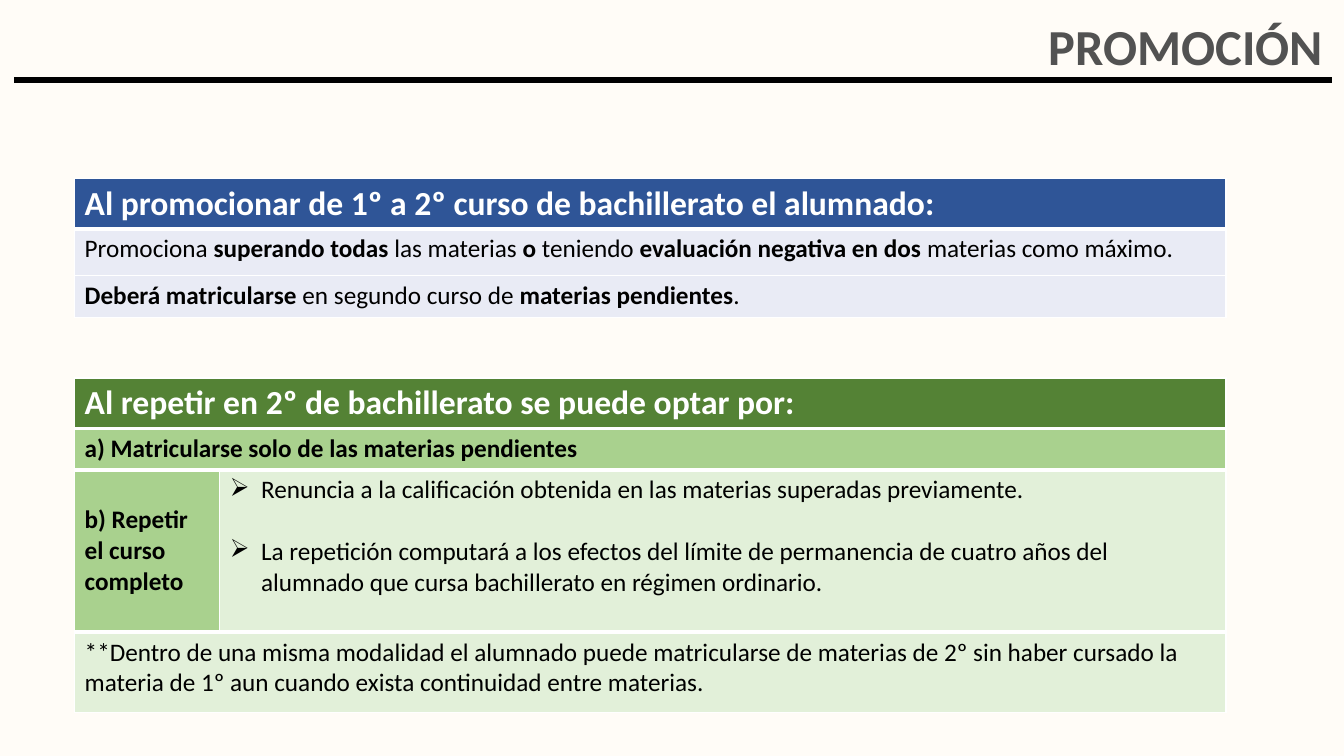
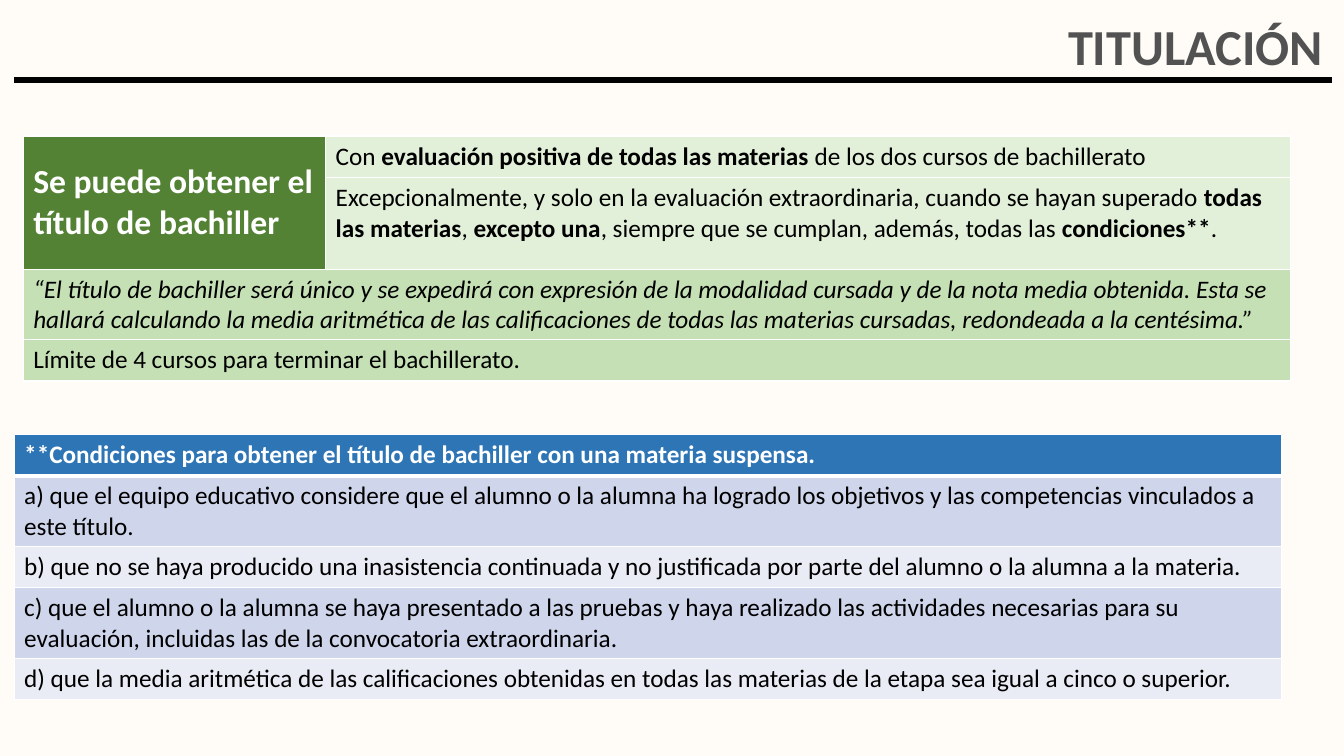
from dataclasses import dataclass

from lxml.etree import SubElement
from pptx import Presentation
from pptx.dml.color import RGBColor
from pptx.enum.shapes import MSO_CONNECTOR as Connector
from pptx.enum.text import MSO_ANCHOR as Anchor, PP_ALIGN as Align
from pptx.oxml.ns import qn
from pptx.util import Pt

PX = 9144  # EMU per px, 100 px to the inch


@dataclass(frozen=True)
class Theme:
    font: str = "Calibri"
    background: str = "FFFCF7"
    title: str = "525252"
    black: str = "000000"
    white: str = "FFFFFF"
    navy: str = "2F5597"
    blue: str = "2E75B6"
    blue_band: str = "CFD5EA"
    blue_pale: str = "E9EBF5"
    green_dark: str = "548235"
    green: str = "A9D18E"
    green_soft: str = "C5E0B4"
    green_pale: str = "E2F0D9"
    title_size: int = 36
    heading_size: int = 24
    body_size: int = 18


THEME = Theme()

# Text styles
TITLE = dict(size=THEME.title_size, color=THEME.title, bold=True)
HEADING = dict(size=THEME.heading_size, color=THEME.white, bold=True)
SUBHEADING = dict(HEADING, size=THEME.body_size)
BODY = dict(size=THEME.body_size, color=THEME.black, bold=False)
STRONG = dict(BODY, bold=True)
QUOTE = dict(BODY, italic=True)

# Slide contents. Cells: row, column, (rows, columns) spanned, fill, style,
# anchor, paragraphs. Words between bars switch to bold; "thick" lists the
# row boundaries with a heavy rule.
SLIDES = [
    ("PROMOCIÓN", [
        dict(left=74, top=177, columns=[1142], rows=[50, 46, 42], thick=[1], cells=[
            (0, 0, (1, 1), THEME.navy, HEADING, Anchor.TOP,
             ["Al promocionar de 1º a 2º curso de bachillerato el alumnado:"]),
            (1, 0, (1, 1), THEME.blue_pale, BODY, Anchor.TOP,
             ["Promociona |superando todas| las materias |o| teniendo "
              "|evaluación negativa en dos |materias como máximo."]),
            (2, 0, (1, 1), THEME.blue_pale, BODY, Anchor.TOP,
             ["|Deberá matricularse |en segundo curso de |materias pendientes|."]),
        ]),
        dict(left=74, top=375, columns=[144, 998], rows=[50, 41, 161, 80],
             thick=[1, 2, 3], cells=[
            (0, 0, (1, 2), THEME.green_dark, HEADING, Anchor.TOP,
             ["Al repetir en 2º de bachillerato se puede optar por:"]),
            (1, 0, (1, 2), THEME.green, STRONG, Anchor.TOP,
             ["a) Matricularse solo de las materias pendientes"]),
            (2, 0, (1, 1), THEME.green, STRONG, Anchor.MIDDLE,
             ["b) Repetir el curso completo"]),
            (2, 1, (1, 1), THEME.green_pale, BODY, Anchor.TOP,
             ["Renuncia a la calificación obtenida en las materias superadas previamente.",
              "La repetición computará a los efectos del límite de permanencia de cuatro "
              "años del alumnado que cursa bachillerato en régimen ordinario."]),
            (3, 0, (1, 2), THEME.green_pale, BODY, Anchor.TOP,
             ["**Dentro de una misma modalidad el alumnado puede matricularse de materias "
              "de 2º sin haber cursado la materia de 1º aun cuando exista continuidad "
              "entre materias."]),
        ]),
    ]),
    ("TITULACIÓN", [
        dict(left=23, top=135, columns=[300, 957], rows=[41, 91, 70, 41], thick=[], cells=[
            (0, 0, (2, 1), THEME.green_dark, HEADING, Anchor.MIDDLE,
             ["Se puede obtener el título de bachiller"]),
            (0, 1, (1, 1), THEME.green_pale, BODY, Anchor.TOP,
             ["Con |evaluación positiva de todas las materias| de los dos cursos de "
              "bachillerato"]),
            (1, 1, (1, 1), THEME.green_pale, BODY, Anchor.TOP,
             ["Excepcionalmente, y solo en la evaluación extraordinaria, cuando se hayan "
              "superado |todas las materias|, |excepto una|, siempre que se cumplan, "
              "además, todas las |condiciones**|."]),
            (2, 0, (1, 2), THEME.green_soft, QUOTE, Anchor.MIDDLE,
             ["“El título de bachiller será único y se expedirá con expresión de la "
              "modalidad cursada y de la nota media obtenida. Esta se hallará calculando "
              "la media aritmética de las calificaciones de todas las materias cursadas, "
              "redondeada a la centésima.”"]),
            (3, 0, (1, 2), THEME.green_soft, BODY, Anchor.MIDDLE,
             ["Límite de 4 cursos para terminar el bachillerato."]),
        ]),
        dict(left=14, top=431, columns=[1257], rows=[41, 70, 41, 70, 41], thick=[1], cells=[
            (0, 0, (1, 1), THEME.blue, SUBHEADING, Anchor.TOP,
             ["**Condiciones para obtener el título de bachiller con una materia suspensa."]),
            (1, 0, (1, 1), THEME.blue_band, BODY, Anchor.TOP,
             ["a) que el equipo educativo considere que el alumno o la alumna ha logrado "
              "los objetivos y las competencias vinculados a este título."]),
            (2, 0, (1, 1), THEME.blue_pale, BODY, Anchor.TOP,
             ["b) que no se haya producido una inasistencia continuada y no justificada "
              "por parte del alumno o la alumna a la materia."]),
            (3, 0, (1, 1), THEME.blue_band, BODY, Anchor.TOP,
             ["c) que el alumno o la alumna se haya presentado a las pruebas y haya "
              "realizado las actividades necesarias para su evaluación, incluidas las de "
              "la convocatoria extraordinaria."]),
            (4, 0, (1, 1), THEME.blue_pale, BODY, Anchor.TOP,
             ["d) que la media aritmética de las calificaciones obtenidas en todas las "
              "materias de la etapa sea igual a cinco o superior."]),
        ]),
    ]),
]


def write_text(paragraph, text, style):
    """Add the runs of one paragraph; bars toggle bold."""
    for index, part in enumerate(text.split("|")):
        if not part:
            continue
        run = paragraph.add_run()
        run.text = part
        formats = dict(name=THEME.font, size=Pt(style["size"]),
                       bold=style["bold"] or index % 2 == 1,
                       italic=style.get("italic", False))
        for name, value in formats.items():
            setattr(run.font, name, value)
        run.font.color.rgb = RGBColor.from_string(style["color"])


def set_borders(cell, widths):
    """Draw white borders, widths in points by side."""
    properties = cell._tc.get_or_add_tcPr()
    for position, (side, width) in enumerate(widths.items()):
        line = SubElement(properties, qn(f"a:ln{side}"), w=str(Pt(width)))
        fill = SubElement(line, qn("a:solidFill"))
        SubElement(fill, qn("a:srgbClr"), val=THEME.white)
        properties.insert(position, line)


presentation = Presentation()
presentation.slide_width = 1333 * PX
presentation.slide_height = 750 * PX

for title, tables in SLIDES:
    slide = presentation.slides.add_slide(presentation.slide_layouts[6])
    slide.background.fill.solid()
    slide.background.fill.fore_color.rgb = RGBColor.from_string(THEME.background)

    # Title
    frame = slide.shapes.add_textbox(139 * PX, 15 * PX, 1183 * PX, 76 * PX).text_frame
    for name, value in dict(word_wrap=True, margin_top=7 * PX,
                            vertical_anchor=Anchor.TOP).items():
        setattr(frame, name, value)
    paragraph = frame.paragraphs[0]
    paragraph.alignment = Align.RIGHT
    paragraph.line_spacing = 0.9
    write_text(paragraph, title, TITLE)

    # Rule under the title
    rule = slide.shapes.add_connector(Connector.STRAIGHT, 14 * PX, 79 * PX, 1321 * PX, 79 * PX)
    rule.line.color.rgb = RGBColor.from_string(THEME.black)
    rule.line.width = Pt(4.25)
    SubElement(rule._element.spPr, qn("a:effectLst"))

    # Tables
    for data in tables:
        columns, rows = data["columns"], data["rows"]
        table = slide.shapes.add_table(
            len(rows), len(columns), data["left"] * PX, data["top"] * PX,
            sum(columns) * PX, sum(rows) * PX).table
        table.first_row = table.horz_banding = False
        for column, width in zip(table.columns, columns):
            column.width = width * PX
        for row, height in zip(table.rows, rows):
            row.height = height * PX

        for row, column, (row_span, column_span), fill, style, anchor, texts in data["cells"]:
            cell = table.cell(row, column)
            last_row, last_column = row + row_span - 1, column + column_span - 1
            if (last_row, last_column) != (row, column):
                cell.merge(table.cell(last_row, last_column))
            cell.vertical_anchor = anchor
            cell.fill.solid()
            cell.fill.fore_color.rgb = RGBColor.from_string(fill)

            for index, text in enumerate(texts):
                frame = cell.text_frame
                paragraph = frame.add_paragraph() if index else frame.paragraphs[0]
                write_text(paragraph, text, style)
                if len(texts) > 1:  # arrow bullets, one line apart
                    paragraph.space_before = Pt(22 if index else 0)
                    properties = paragraph._p.get_or_add_pPr()
                    properties.set("marL", str(31 * PX))
                    properties.set("indent", str(-31 * PX))
                    SubElement(properties, qn("a:buFont"), typeface="Wingdings")
                    SubElement(properties, qn("a:buChar"), char="Ø")

        for row in range(len(rows)):
            top, bottom = (3 if edge in data["thick"] else 1 for edge in (row, row + 1))
            for column in range(len(columns)):
                set_borders(table.cell(row, column), dict(L=1, R=1, T=top, B=bottom))

presentation.save("out.pptx")
